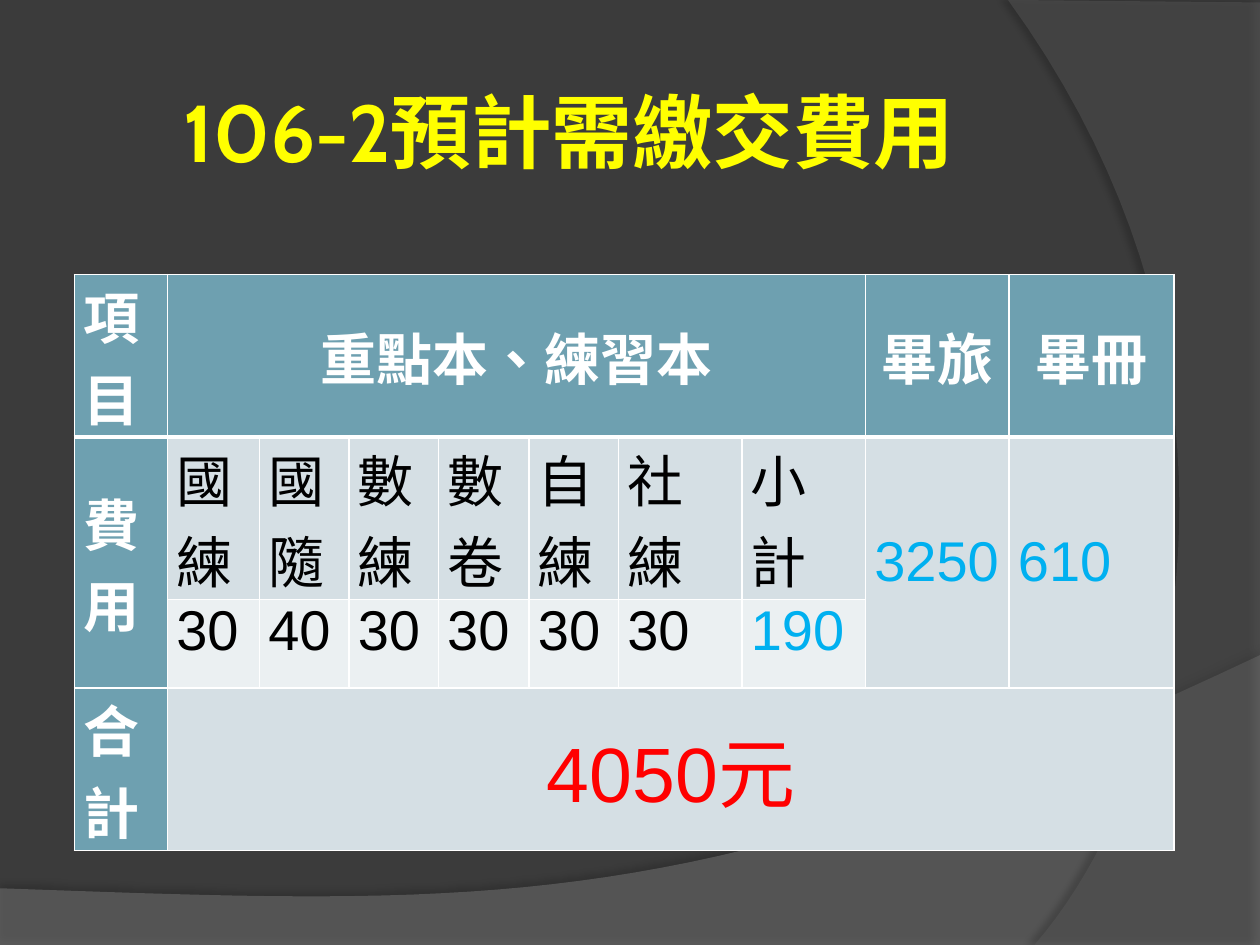
"""Build a slide with the table of fees due in term 106-2."""
from lxml.etree import SubElement
from pptx import Presentation
from pptx.dml.color import RGBColor
from pptx.enum.text import MSO_ANCHOR, PP_ALIGN
from pptx.oxml import parse_xml
from pptx.oxml.ns import nsdecls, qn
from pptx.util import Inches, Pt

COLORS = {
    "background": "3B3B3B", "wave": "7F7F7F", "arc": "5E5E5E",
    "title": "FFFF00", "white": "FFFFFF", "black": "000000",
    "header": "6EA0B0", "band": "D5DFE4", "light": "EBF0F2",
    "amount": "00B0F0", "total": "FF0000",
}


def write(frame, text, size=32, font="Arial", color="black", bold=False, align=PP_ALIGN.LEFT):
    paragraph = frame.paragraphs[0]
    paragraph.alignment = align
    run = paragraph.add_run()
    run.text = text
    run.font.size = Pt(size)
    run.font.name = font
    run.font.bold = bold
    run.font.color.rgb = RGBColor.from_string(COLORS[color])
    run._r.get_or_add_rPr().set("lang", "zh-TW")


def bezier(start, first, second, end, steps=40):
    shares = [step / steps for step in range(1, steps + 1)]
    return [
        tuple((1 - t) ** 3 * a + 3 * (1 - t) ** 2 * t * b + 3 * (1 - t) * t ** 2 * c + t ** 3 * d
              for a, b, c, d in zip(start, first, second, end))
        for t in shares
    ]


deck = Presentation()
deck.slide_width, deck.slide_height = Inches(10), Inches(7.5)
slide = deck.slides.add_slide(deck.slide_layouts[6])
slide.background.fill.solid()
slide.background.fill.fore_color.rgb = RGBColor.from_string(COLORS["background"])

wave = [(0, 7.05), (0, 7.5), (10, 7.5), (10, 5.2)]
wave += bezier((10, 5.2), (5.59, 7.29), (3.91, 7.19), (0, 7.05))
arc = [(10, 0.02), (10, 7.5), (8.21, 7.5)]
arc += bezier((8.21, 7.5), (9.35, 6.19), (10.18, 3), (8, 0))
for outline, color, opacity, shade, distance, direction in (
    (wave, "wave", 45, 35, 3.5, 270),
    (arc, "arc", 40, 45, 4, 180),
):
    points = [(Inches(x), Inches(y)) for x, y in outline]
    builder = slide.shapes.build_freeform(*points[0])
    builder.add_line_segments(points[1:], close=True)
    swoosh = builder.convert_to_shape()
    swoosh.line.fill.background()
    swoosh.fill.solid()
    swoosh.fill.fore_color.rgb = RGBColor.from_string(COLORS[color])
    tone = swoosh._element.spPr.find(qn("a:solidFill"))[0]
    SubElement(tone, qn("a:alpha"), val=str(opacity * 1000))
    swoosh._element.spPr.append(parse_xml(
        f'<a:effectLst {nsdecls("a")}><a:outerShdw blurRad="{Pt(4)}" dist="{Pt(distance)}" '
        f'dir="{direction * 60000}" algn="ctr" rotWithShape="0"><a:srgbClr val="{COLORS["black"]}">'
        f'<a:alpha val="{shade * 1000}"/></a:srgbClr></a:outerShdw></a:effectLst>'
    ))

title = slide.shapes.add_textbox(Inches(0.43), Inches(0.52), Inches(8.17), Inches(1.02)).text_frame
title.word_wrap = True
title.vertical_anchor = MSO_ANCHOR.MIDDLE
write(title, "106-2預計需繳交費用", size=46, font="Cabin", color="title", bold=True, align=PP_ALIGN.CENTER)

columns = [0.74, 0.73, 0.71, 0.71, 0.72, 0.71, 0.98, 0.98, 1.14, 1.31]
rows = [1.29, 1.29, 0.7, 1.29]
fees = slide.shapes.add_table(
    len(rows), len(columns), Inches(0.59), Inches(2.18), Inches(sum(columns)), Inches(sum(rows))
).table
for column, width in zip(fees.columns, columns):
    column.width = Inches(width)
for row, height in zip(fees.rows, rows):
    row.height = Inches(height)

for r in range(len(rows)):
    for c in range(len(columns)):
        cell = fees.cell(r, c)
        cell.margin_left = cell.margin_right = Inches(0.07)
        cell.margin_top = cell.margin_bottom = 0
        detail = r in (1, 2) and 1 <= c <= 7 and (r, c) != (1, 7)
        cell.vertical_anchor = MSO_ANCHOR.TOP if detail else MSO_ANCHOR.MIDDLE
        for side in "LRTB":
            heavy = (r, side) in ((0, "B"), (1, "T"))
            border = SubElement(cell._tc.get_or_add_tcPr(), qn(f"a:ln{side}"), w=str(Pt(3 if heavy else 1)))
            paint = SubElement(border, qn("a:solidFill"))
            SubElement(paint, qn("a:srgbClr"), val=COLORS["white"])
        fill = "header" if r == 0 or c == 0 else "light" if r == 2 and c <= 7 else "band"
        cell.fill.solid()
        cell.fill.fore_color.rgb = RGBColor.from_string(COLORS[fill])

for top, left, bottom, right in ((0, 1, 0, 7), (1, 0, 2, 0), (1, 8, 2, 8), (1, 9, 2, 9), (3, 1, 3, 9)):
    fees.cell(top, left).merge(fees.cell(bottom, right))

for r, label in ((0, "項目"), (1, "費用"), (3, "合計")):
    write(fees.cell(r, 0).text_frame, label, color="white", bold=True)
for c, heading in ((1, "重點本、練習本"), (8, "畢旅"), (9, "畢冊")):
    write(fees.cell(0, c).text_frame, heading, color="white", bold=True, align=PP_ALIGN.CENTER)
books = [("國練", 30), ("國隨", 40), ("數練", 30), ("數卷", 30), ("自練", 30), ("社練", 30), ("小計", 190)]
for c, (book, price) in enumerate(books, start=1):
    write(fees.cell(1, c).text_frame, book)
    write(fees.cell(2, c).text_frame, str(price), color="amount" if book == "小計" else "black")
for c, amount in ((8, "3250"), (9, "610")):
    write(fees.cell(1, c).text_frame, amount, color="amount")
write(fees.cell(3, 1).text_frame, "4050元", size=44, color="total", align=PP_ALIGN.CENTER)

deck.save("out.pptx")
